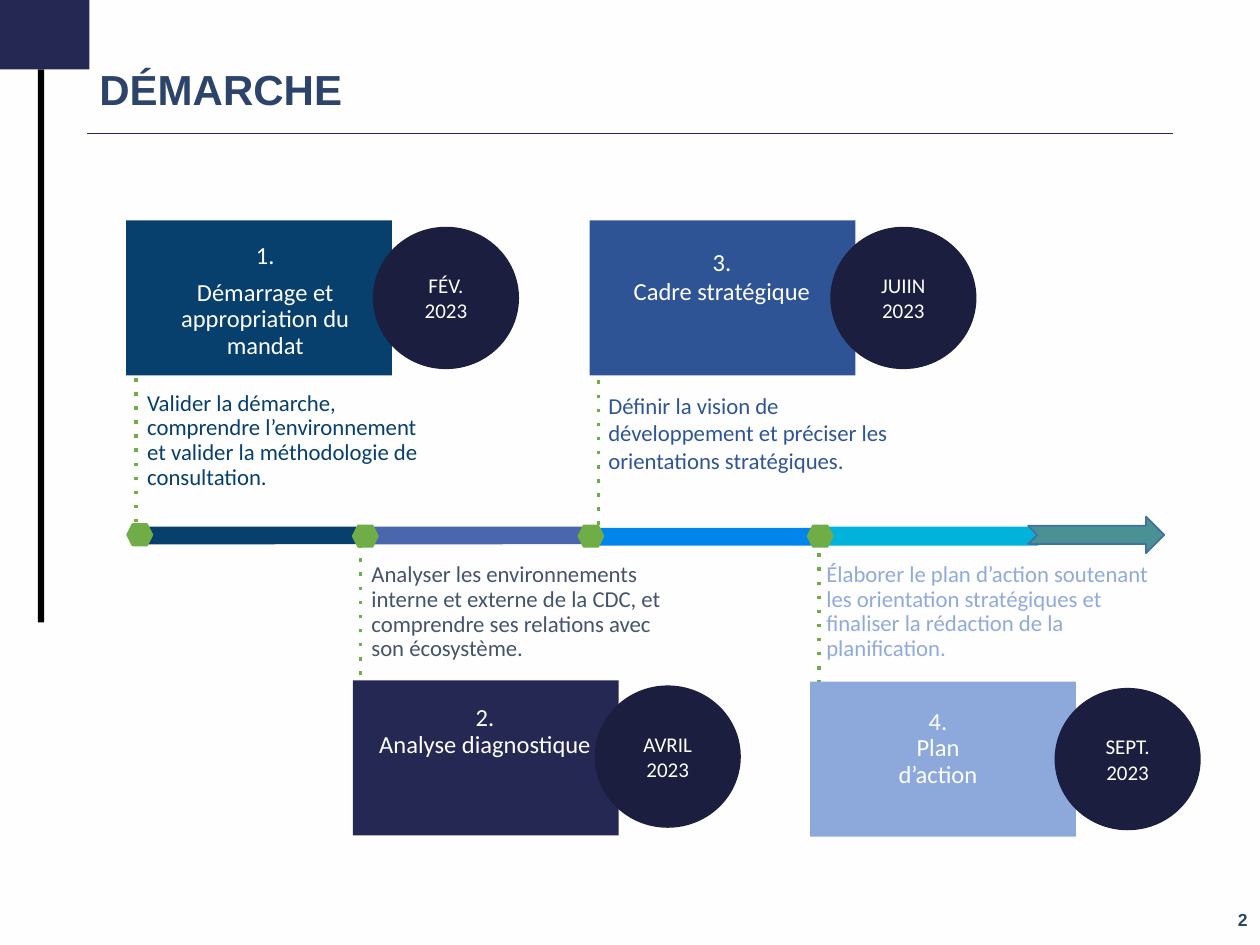
from lxml.etree import SubElement as Sub
from pptx import Presentation
from pptx.dml.color import RGBColor as RGB
from pptx.enum.shapes import MSO_CONNECTOR as Wire, MSO_SHAPE as Kind
from pptx.enum.text import MSO_ANCHOR as Anchor, PP_ALIGN as Align
from pptx.oxml.ns import qn
from pptx.util import Inches, Pt

COLS, ROWS = 100, 75
CELL = Inches(0.1)
NAVY, INK, GREEN, WHITE = "242852", "2C446A", "70AD47", "FFFEFE"

BARS = [
    (11.1, 41.8, 1.4, "073F6D"),
    (29.2, 41.8, 1.4, "4A66AC"),
    (64.9, 41.8, 1.5, "01B3DA"),
    (47.2, 41.9, 1.4, "0086EA"),
]
DOTS = [(10.8, 30, 43.3), (28.6, 43.2, 54), (47.5, 30.2, 43.4), (65, 42.8, 56)]
CARDS = [
    (10, 17.5, "073F6D"),
    (28, 54, NAVY),
    (46.8, 17.5, "2F5496"),
    (64.3, 54.1, "8DA9DB"),
]
NODES = [(10.1, 41.6), (28, 41.7), (45.9, 41.7), (64.1, 41.7)]
HEADS = [
    ((11.3, 18.8, 19.5, 10), ["1.", "Démarrage et appropriation du mandat"], 0.9),
    ((28.8, 55.5, 19.4, 9.7), ["2.\vAnalyse diagnostique"], 0.9),
    ((48.5, 19.1, 17.6, 9.2), ["3.", "Cadre stratégique"], 1),
    ((64.6, 55.8, 19.7, 9.2), ["4.\vPlan\vd’action"], 0.9),
]
NOTES = [
    ((10.7, 30.6, 24.6, 9.6), "073F6D", 0.9,
     "Valider la démarche, comprendre l’environnement et valider la "
     "méthodologie de consultation."),
    ((28.5, 44.2, 27, 14.5), "44546A", 0.9,
     "Analyser les environnements interne et externe de la CDC, et "
     "comprendre ses relations avec son écosystème."),
    ((47.3, 30.6, 25.4, 11.3), "2E5597", 1,
     "Définir la vision de développement et préciser les orientations "
     "stratégiques."),
    ((64.6, 44.2, 28.5, 10.6), "90AADC", 0.9,
     "Élaborer le plan d’action soutenant les orientation stratégiques et "
     "finaliser la rédaction de la planification."),
]
DATES = [
    (29.6, 18, "FÉV."),
    (47.2, 54.4, "AVRIL"),
    (65.9, 18, "JUIIN"),
    (83.7, 54.6, "SEPT."),
]


def paint(target, color):
    target.solid()
    target.fore_color.rgb = RGB.from_string(color)


def span(*cells):
    return [round(n * CELL) for n in cells]


def block(slide, kind, box, color, edge=None):
    item = slide.shapes.add_shape(kind, *span(*box))
    item.shadow.inherit = False
    paint(item.fill, color)
    if edge:
        paint(item.line.fill, edge)
        item.line.width = Pt(1)
    else:
        item.line.fill.background()
    return item


def rule(slide, ends, color, width, dash=None):
    item = slide.shapes.add_connector(Wire.STRAIGHT, *span(*ends))
    paint(item.line.fill, color)
    item.line.width = Pt(width)
    props = item._element.spPr
    if dash:
        Sub(props.find(qn("a:ln")), qn("a:prstDash"), val=dash)
    Sub(props, qn("a:effectLst"))


def write(frame, lines, size, color, face="Calibri", bold=False,
          align=Align.LEFT, lead=1, gap=0, anchor=Anchor.TOP):
    frame.word_wrap = True
    frame.vertical_anchor = anchor
    for i, line in enumerate(lines):
        para = frame.add_paragraph() if i else frame.paragraphs[0]
        para.text = line
        para.alignment = align
        para.line_spacing = lead
        if i and gap:
            para.space_before = Pt(gap)
        font = para.font
        font.name, font.size, font.bold = face, Pt(size), bold
        paint(font.fill, color)


def label(slide, box, lines, size, color, **style):
    item = slide.shapes.add_textbox(*span(*box))
    write(item.text_frame, lines, size, color, **style)


def frame_page(slide):
    paint(slide.background.fill, WHITE)
    block(slide, Kind.RECTANGLE, (3, 5.5, 0.5, 43.9), "000000")
    block(slide, Kind.RECTANGLE, (0, 0, 7.1, 5.5), NAVY)
    rule(slide, (6.9, 10.6, 93.1, 10.6), NAVY, 1)
    style = dict(face="Arial", bold=True, anchor=Anchor.MIDDLE)
    label(slide, (6.9, 4, 86.2, 6.6), ["DÉMARCHE"], 24, INK, lead=0.9, **style)
    label(slide, (77.5, 71, 22.5, 4), ["2"], 10, INK, align=Align.RIGHT, **style)


def draw_line(slide):
    for x, y, high, color in BARS:
        block(slide, Kind.ROUNDED_RECTANGLE, (x, y, 17.7, high), color)
    for x, top, end in DOTS:
        rule(slide, (x, top, x, end), GREEN, 2, "dot")
    for x, y, color in CARDS:
        block(slide, Kind.RECTANGLE, (x, y, 21.1, 12.3), color)
    block(slide, Kind.NOTCHED_RIGHT_ARROW, (81.6, 41, 10.8, 2.9), "499192", "41719C")
    for x, y in NODES:
        block(slide, Kind.HEXAGON, (x, y, 2, 1.7), GREEN, GREEN)


def fill_steps(slide):
    for box, lines, lead in HEADS:
        label(slide, box, lines, 14, WHITE, align=Align.CENTER, lead=lead,
              gap=6 if lead < 1 else 0)
    for box, color, lead, words in NOTES:
        label(slide, box, [words], 13, color, lead=lead)
    for x, y, month in DATES:
        disc = block(slide, Kind.OVAL, (x, y, 11.6, 11.3), "1B1E3E")
        write(disc.text_frame, [month, "2023"], 12, "FFFFFF",
              align=Align.CENTER, anchor=Anchor.MIDDLE)


def main():
    deck = Presentation()
    deck.slide_width, deck.slide_height = span(COLS, ROWS)
    slide = deck.slides.add_slide(deck.slide_layouts[6])
    frame_page(slide)
    draw_line(slide)
    fill_steps(slide)
    deck.save("out.pptx")


if __name__ == "__main__":
    main()
